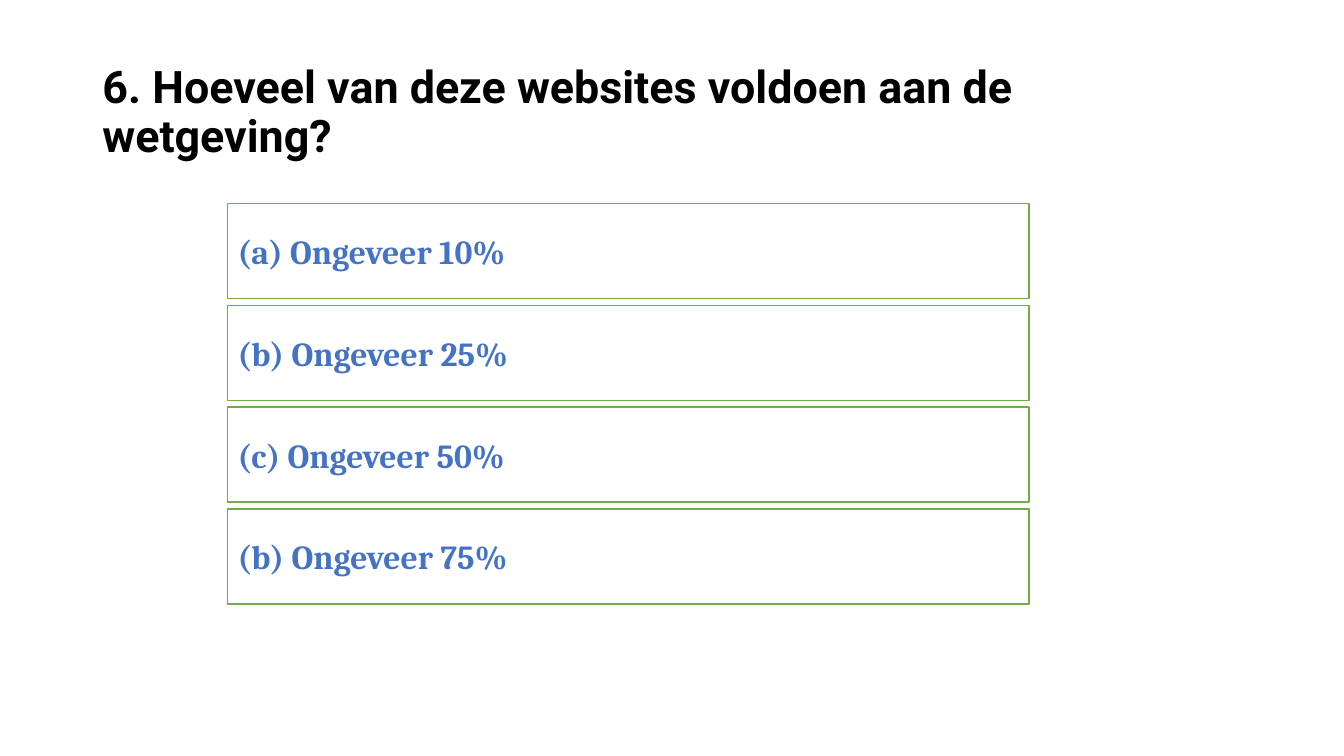
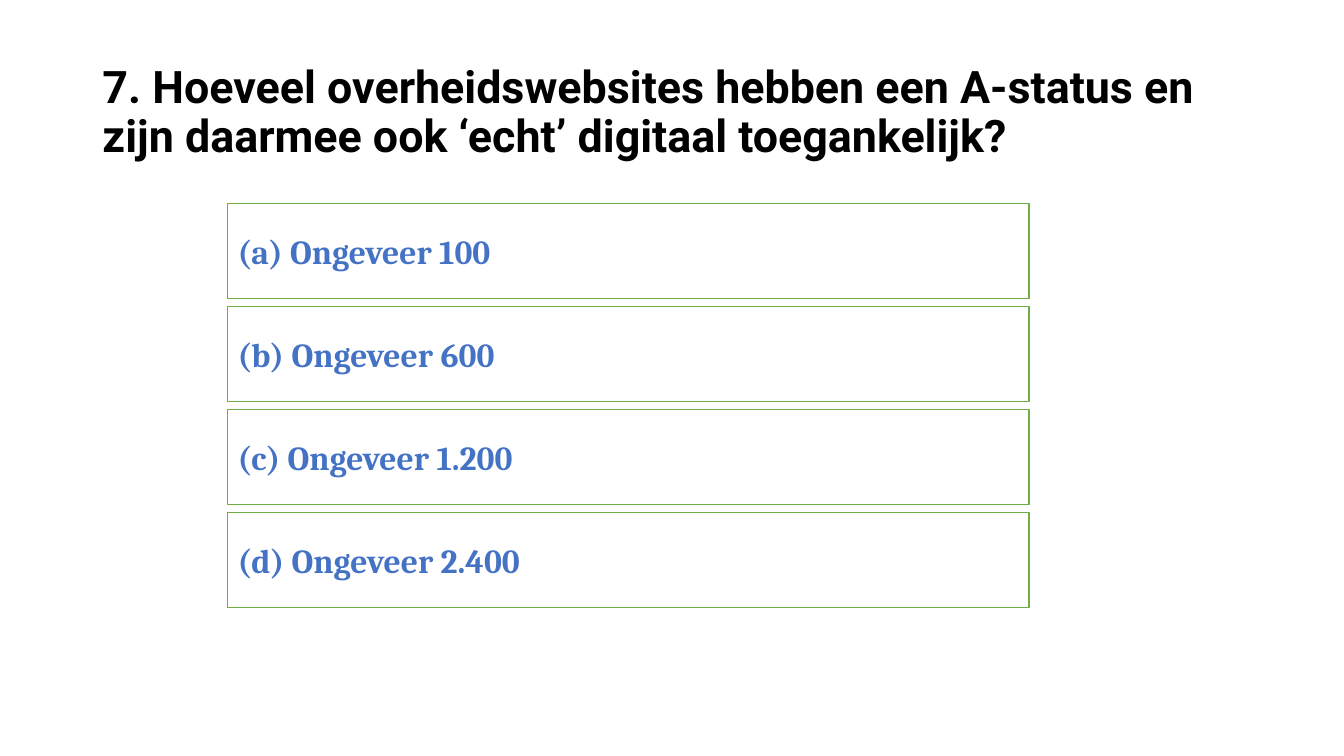
import pptx
import pptx.dml.color
import pptx.enum.shapes
import pptx.enum.text
import pptx.util

Pt = pptx.util.Pt
PP_ALIGN = pptx.enum.text.PP_ALIGN
MSO_ANCHOR = pptx.enum.text.MSO_ANCHOR

# Shared style
BLACK, WHITE, GREEN, BLUE = "000000", "FFFFFF", "70AD47", "4472C4"
TITLE_BOX = (66, 28.8, 828, 104.4)
ANSWER_LEFT, ANSWER_TOP = 162.7, 145.4
ANSWER_WIDTH, ANSWER_HEIGHT = 572.4, 67.9

# Each question: title, distance between answer tops, answers
QUESTIONS = [
    ("6. Hoeveel van deze websites voldoen aan de wetgeving?", 72.7,
     ["(a) Ongeveer 10%", "(b) Ongeveer 25%",
      "(c) Ongeveer 50%", "(b) Ongeveer 75%"]),
    ("7. Hoeveel overheidswebsites hebben een A-status en zijn daarmee "
     "ook ‘echt’ digitaal toegankelijk?", 73.6,
     ["(a) Ongeveer 100", "(b) Ongeveer 600",
      "(c) Ongeveer 1.200", "(d) Ongeveer 2.400"]),
]


def color(hex_string):
    return pptx.dml.color.RGBColor.from_string(hex_string)


def set_text(shape, text, font_name, size, font_color):
    """Write one bold, left-aligned, vertically centred paragraph."""
    text_frame = shape.text_frame
    text_frame.text = text
    text_frame.word_wrap = True
    text_frame.auto_size = pptx.enum.text.MSO_AUTO_SIZE.NONE
    text_frame.vertical_anchor = MSO_ANCHOR.MIDDLE
    paragraph = text_frame.paragraphs[0]
    paragraph.alignment = PP_ALIGN.LEFT
    font = paragraph.runs[0].font
    font.name = font_name
    font.size = Pt(size)
    font.bold = True
    font.color.rgb = color(font_color)
    return paragraph


presentation = pptx.Presentation()
presentation.slide_width = Pt(960)
presentation.slide_height = Pt(540)
title_only = presentation.slide_layouts.get_by_name("Title Only")

for question, pitch, answers in QUESTIONS:
    slide = presentation.slides.add_slide(title_only)

    # Question
    title = slide.shapes.title
    title.left, title.top, title.width, title.height = map(Pt, TITLE_BOX)
    paragraph = set_text(title, question, "Roboto", 32, BLACK)
    paragraph.line_spacing = 0.9

    # Answer boxes
    for row, answer in enumerate(answers):
        box = slide.shapes.add_shape(
            pptx.enum.shapes.MSO_SHAPE.RECTANGLE,
            Pt(ANSWER_LEFT), Pt(ANSWER_TOP + row * pitch),
            Pt(ANSWER_WIDTH), Pt(ANSWER_HEIGHT))
        box.shadow.inherit = False
        box.fill.solid()
        box.fill.fore_color.rgb = color(WHITE)
        box.line.color.rgb = color(GREEN)
        box.line.width = Pt(1)
        set_text(box, answer, "Cambria", 24, BLUE)

presentation.save("out.pptx")
